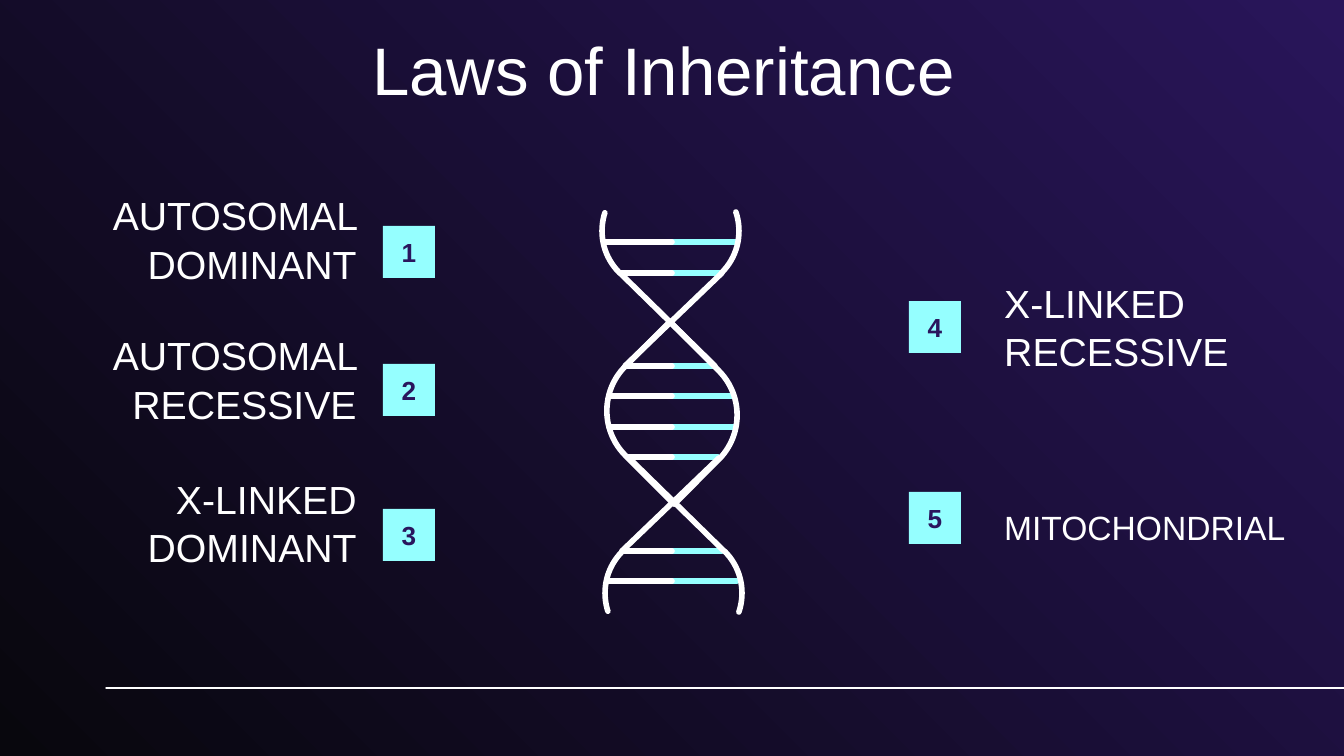
from pptx import Presentation
from pptx import util as u
from pptx.dml import color
from pptx.enum import shapes, text
from pptx.oxml import ns, xmlchemy as xc

WHITE, CYAN, NAVY = "FFFFFF", "95FFFF", "2A165D"
FONT = "Arial"
MID = 672  # where each rung turns from white to cyan

# y, left, right
RUNGS = [
    (242, 605, 736), (273, 620, 720),
    (366, 626, 713), (396, 609, 733), (427, 609, 735), (457, 628, 718),
    (551, 622, 722), (581, 607, 737),
]
CROSSES = [
    (620, 273, 715, 366), (722, 273, 625, 366),
    (622, 551, 719, 458), (724, 551, 629, 458),
]
# left, top, turn, start value, mirrored
ARCS = [
    (602, 172, 315, 178.26, True), (621, 172, 45, 177.76, False),
    (605, 534, 225, 178.26, False), (624, 534, 135, 177.76, True),
]
# words, left, top, width, height, points, side
LABELS = [
    ("AUTOSOMAL DOMINANT", 50, 208, 320, 60, 21, "RIGHT"),
    ("AUTOSOMAL RECESSIVE", 43, 348, 327, 60, 21, "RIGHT"),
    ("X-LINKED DOMINANT", 106, 492, 264, 60, 21, "RIGHT"),
    ("X-LINKED RECESSIVE", 991, 296, 264, 60, 21, "LEFT"),
    ("MITOCHONDRIAL", 991, 503, 340, 46, 18, "LEFT"),
]
BADGES = [(383, 226), (383, 364), (383, 509), (909, 301), (909, 492)]


def px(n):
    return u.Emu(round(n * 914400 / 134.4))


def rgb(code):
    return color.RGBColor.from_string(code)


def pen(item, code, width):
    """Style an outline with round ends and no shadow."""
    item.line.color.rgb = rgb(code)
    item.line.width = u.Pt(width)
    item.line._get_or_add_ln().set("cap", "rnd")


def line(home, x1, y1, x2, y2, code=WHITE, width=3):
    item = home.add_connector(
        shapes.MSO_CONNECTOR.STRAIGHT, px(x1), px(y1), px(x2), px(y2))
    pen(item, code, width)
    item._element.spPr.append(xc.OxmlElement("a:effectLst"))


def curve(home, kind, box, turn, values, flip=False):
    """Add an unfilled, turned outline."""
    item = home.add_shape(kind, *map(px, box))
    item.shadow.inherit = False
    item.fill.background()
    pen(item, WHITE, 3)
    item.rotation = turn
    for i, value in enumerate(values):
        item.adjustments[i] = value
    if flip:
        item._element.spPr.find(ns.qn("a:xfrm")).set("flipH", "1")


def write(item, words, size, side, code=WHITE, bold=False, inset=0.1):
    frame = item.text_frame
    frame.word_wrap = True
    frame.auto_size = text.MSO_AUTO_SIZE.NONE
    frame.vertical_anchor = text.MSO_ANCHOR.MIDDLE
    frame.margin_left = frame.margin_right = u.Inches(inset)
    frame.margin_top = frame.margin_bottom = u.Inches(0.1)
    para = frame.paragraphs[0]
    para.alignment = getattr(text.PP_ALIGN, side)
    run = para.add_run()
    run.text = words
    run.font.name = FONT
    run.font.size = u.Pt(size)
    run.font.bold = bold
    run.font.color.rgb = rgb(code)
    return para


def title(slide, words):
    item = slide.shapes.title
    item.left, item.top, item.width, item.height = map(px, (97, 27, 1133, 83))
    write(item, words, 36, "CENTER")


def label(slide, words, x, y, w, h, size, side):
    item = slide.shapes.add_textbox(*map(px, (x, y, w, h)))
    write(item, words, size, side).line_spacing = 1.04


def badge(slide, num, x, y):
    item = slide.shapes.add_shape(
        shapes.MSO_SHAPE.RECTANGLE, px(x), px(y), px(52), px(52))
    item.shadow.inherit = False
    item.fill.solid()
    item.fill.fore_color.rgb = rgb(CYAN)
    item.line.fill.background()
    write(item, str(num), 14, "CENTER", NAVY, True, 0)


def helix(slide):
    right = slide.shapes.add_group_shape().shapes
    left = slide.shapes.add_group_shape().shapes
    for y, start, end in RUNGS:
        line(right, end, y, MID, y, CYAN)
        line(left, start, y, MID, y)
    curve(left, shapes.MSO_SHAPE.ROUND_2_DIAG_RECTANGLE,
          (609, 347, 126, 132), 315, (0.5, 0))
    for x, y, turn, start, flip in ARCS:
        curve(left, shapes.MSO_SHAPE.ARC, (x, y, 118, 118), turn,
              (start, 0), flip)
    for ends in CROSSES:
        line(left, *ends)


def backdrop(slide):
    fill = slide.background.fill
    fill.gradient()
    fill.gradient_angle = 45
    for stop, place, code in zip(fill.gradient_stops, (0, 1),
                                 ("08070D", "29155A")):
        stop.position = place
        stop.color.rgb = rgb(code)


def main():
    deck = Presentation()
    deck.slide_width, deck.slide_height = px(1344), px(756)
    slide = deck.slides.add_slide(deck.slide_layouts[5])
    backdrop(slide)
    line(slide.shapes, 106, 688, 1344, 688, width=0.75)
    title(slide, "Laws of Inheritance")
    helix(slide)
    for row in LABELS:
        label(slide, *row)
    for num, spot in enumerate(BADGES, 1):
        badge(slide, num, *spot)
    deck.save("out.pptx")


if __name__ == "__main__":
    main()
